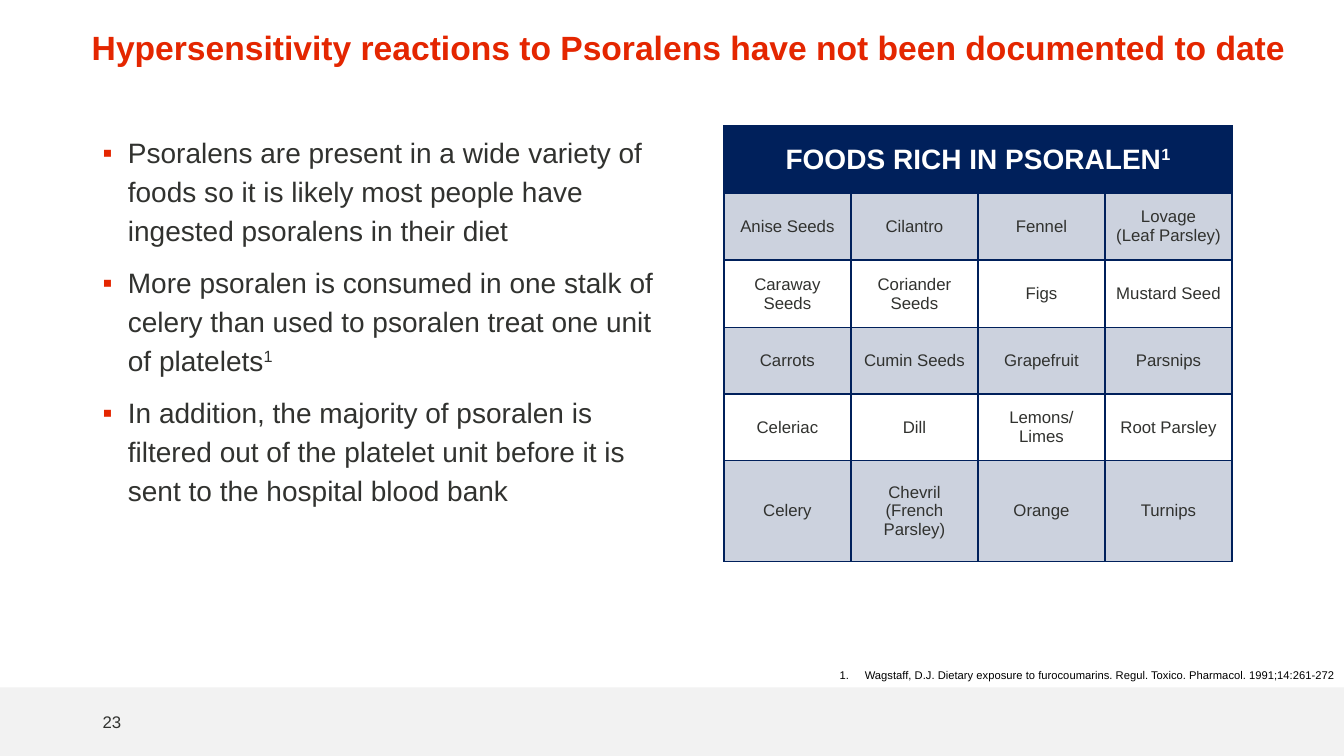
from lxml.etree import SubElement
from pptx import Presentation
from pptx.dml.color import RGBColor
from pptx.enum.shapes import MSO_SHAPE
from pptx.enum.text import MSO_ANCHOR, MSO_AUTO_SIZE, PP_ALIGN
from pptx.oxml.ns import qn
from pptx.util import Inches, Pt

COLORS = {
    "red": "E42600",
    "navy": "00205B",
    "text": "31322F",
    "footer": "F2F2F2",
    "white": "FFFFFF",
    "black": "000000",
}
BULLETS = [
    ("Psoralens are present in a wide variety of foods so it is likely most "
     "people have ingested psoralens in their diet", ""),
    ("More psoralen is consumed in one stalk of celery than used to psoralen "
     "treat one unit of platelets", "1"),
    ("In addition, the majority of psoralen is filtered out of the platelet "
     "unit before it is sent to the hospital blood bank", ""),
]
FOODS = [
    ["Anise Seeds", "Cilantro", "Fennel", "Lovage\n(Leaf Parsley)"],
    ["Caraway Seeds", "Coriander Seeds", "Figs", "Mustard Seed"],
    ["Carrots", "Cumin Seeds", "Grapefruit", "Parsnips"],
    ["Celeriac", "Dill", "Lemons/\nLimes", "Root Parsley"],
    ["Celery", "Chevril\n(French Parsley)", "Orange", "Turnips"],
]
ROW_HEIGHTS = [0.66, 0.67, 0.67, 0.66, 0.66, 1]
COLUMN_WIDTH = 1.26


def style(paragraph, size, color, bold=False):
    font = paragraph.font
    font.name, font.size, font.bold = "Arial", Pt(size), bold
    font.color.rgb = RGBColor.from_string(COLORS[color])


def hang(paragraph):
    """Give the paragraph a quarter-inch hanging indent; return its properties."""
    properties = paragraph._p.get_or_add_pPr()
    properties.set("marL", str(Inches(0.25)))
    properties.set("indent", str(-Inches(0.25)))
    return properties


presentation = Presentation()
presentation.slide_width = Inches(13.33)
presentation.slide_height = Inches(7.5)
slide = presentation.slides.add_slide(presentation.slide_layouts[5])
shapes = slide.shapes

# Title
title = shapes.title
title.left, title.top = Inches(0.81), Inches(0.12)
title.width, title.height = Inches(12.42), Inches(0.75)
title.text_frame.text = "Hypersensitivity reactions to Psoralens have not been documented to date"
title.text_frame.auto_size = MSO_AUTO_SIZE.NONE
title.text_frame.vertical_anchor = MSO_ANCHOR.MIDDLE
paragraph = title.text_frame.paragraphs[0]
paragraph.alignment = PP_ALIGN.LEFT
paragraph.line_spacing = 0.9
style(paragraph, 24, "red", bold=True)

# Footer band
band = shapes.add_shape(MSO_SHAPE.RECTANGLE, 0, Inches(6.82), Inches(13.33), Inches(0.68))
band.shadow.inherit = False
band.fill.solid()
band.fill.fore_color.rgb = RGBColor.from_string(COLORS["footer"])
band.line.fill.background()

# Bulleted statements
body = shapes.add_textbox(Inches(0.92), Inches(1.25), Inches(5.89), Inches(5.5)).text_frame
body.word_wrap = True
for index, (statement, reference) in enumerate(BULLETS):
    paragraph = body.add_paragraph() if index else body.paragraphs[0]
    paragraph.line_spacing = 1.15
    if index:
        paragraph.space_before = Pt(10)
    properties = hang(paragraph)
    bullet_color = SubElement(properties, qn("a:buClr"))
    SubElement(bullet_color, qn("a:srgbClr"), val=COLORS["red"])
    SubElement(properties, qn("a:buFont"), typeface="Arial")
    SubElement(properties, qn("a:buChar"), char="▪")
    paragraph.add_run().text = statement
    if reference:
        run = paragraph.add_run()
        run.text = reference
        run.font._element.set("baseline", "30000")
    style(paragraph, 20, "text")

# Table of foods
table = shapes.add_table(
    len(ROW_HEIGHTS), 4, Inches(7.18), Inches(1.25),
    Inches(4 * COLUMN_WIDTH), Inches(sum(ROW_HEIGHTS))).table
table.first_row = table.horz_banding = False
for column in table.columns:
    column.width = Inches(COLUMN_WIDTH)
for row, height in zip(table.rows, ROW_HEIGHTS):
    row.height = Inches(height)
table.cell(0, 0).merge(table.cell(0, 3))

for row_index, row in enumerate(table.rows):
    for column_index, cell in enumerate(row.cells):
        cell.margin_top = cell.margin_bottom = 0
        cell.vertical_anchor = MSO_ANCHOR.MIDDLE
        cell_properties = cell._tc.get_or_add_tcPr()
        for side in ("lnL", "lnR", "lnT", "lnB"):
            under_header = (row_index, side) in ((0, "lnB"), (1, "lnT"))
            border = SubElement(cell_properties, qn(f"a:{side}"),
                                w=str(Pt(2 if under_header else 1)))
            border_fill = SubElement(border, qn("a:solidFill"))
            SubElement(border_fill, qn("a:srgbClr"), val=COLORS["navy"])
        if row_index and row_index % 2 == 0:
            cell.fill.background()
        else:
            cell.fill.solid()
            cell.fill.fore_color.rgb = RGBColor.from_string(COLORS["navy"])
        if row_index == 0:
            continue
        if row_index % 2:
            fill_color = cell_properties.find(qn("a:solidFill")).find(qn("a:srgbClr"))
            SubElement(fill_color, qn("a:alpha"), val="20000")
        cell.text_frame.text = FOODS[row_index - 1][column_index]
        for paragraph in cell.text_frame.paragraphs:
            paragraph.alignment = PP_ALIGN.CENTER
            style(paragraph, 12, "text")

header = table.cell(0, 0).text_frame.paragraphs[0]
header.alignment = PP_ALIGN.CENTER
header.add_run().text = "FOODS RICH IN PSORALEN"
run = header.add_run()
run.text = "1"
run.font._element.set("baseline", "30000")
style(header, 20, "white", bold=True)

# Reference
reference_frame = shapes.add_textbox(
    Inches(2.92), Inches(6.58), Inches(10.42), Inches(0.24)).text_frame
reference_frame.word_wrap = True
paragraph = reference_frame.paragraphs[0]
paragraph.text = "Wagstaff, D.J. Dietary exposure to furocoumarins. Regul. Toxico. Pharmacol. 1991;14:261-272"
paragraph.alignment = PP_ALIGN.RIGHT
SubElement(hang(paragraph), qn("a:buAutoNum"), type="arabicPeriod")
style(paragraph, 8, "black")

# Page number
page_frame = shapes.add_textbox(
    Inches(0.92), Inches(6.96), Inches(0.5), Inches(0.4)).text_frame
page_frame.word_wrap = True
page_frame.vertical_anchor = MSO_ANCHOR.MIDDLE
page_frame.text = "23"
style(page_frame.paragraphs[0], 12, "text")

presentation.save("out.pptx")
